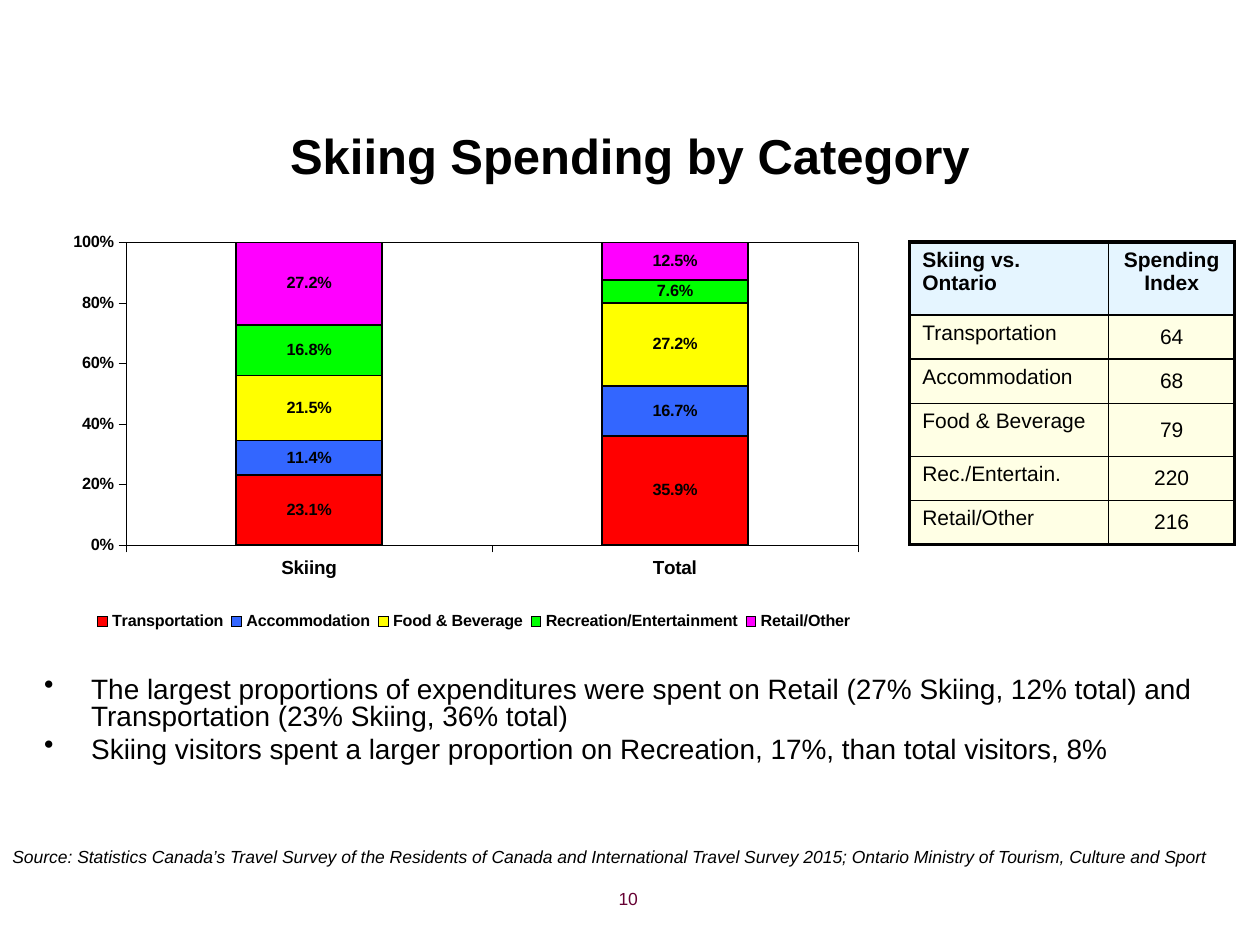
from lxml.etree import SubElement
from pptx import Presentation
from pptx.chart.data import CategoryChartData
from pptx.dml.color import RGBColor
from pptx.enum.chart import XL_CHART_TYPE as ChartType, XL_LEGEND_POSITION as LegendPos
from pptx.enum.chart import XL_TICK_MARK as TickMark
from pptx.enum.text import MSO_ANCHOR as Anchor, PP_ALIGN as Align
from pptx.oxml import parse_xml
from pptx.oxml.ns import nsdecls, qn
from pptx.util import Cm, Pt

FONT = "Arial"
BLACK = "000000"
CATEGORIES = ["Skiing", "Total"]
SPENDING = [
    ("Transportation", "FF0000", (0.231, 0.359)),
    ("Accommodation", "3366FF", (0.114, 0.167)),
    ("Food & Beverage", "FFFF00", (0.215, 0.272)),
    ("Recreation/Entertainment", "00FF00", (0.168, 0.076)),
    ("Retail/Other", "FF00FF", (0.272, 0.125)),
]
INDEX_ROWS = [
    ("Skiing vs. Ontario", "Spending Index"),
    ("Transportation", "64"),
    ("Accommodation", "68"),
    ("Food & Beverage", "79"),
    ("Rec./Entertain.", "220"),
    ("Retail/Other", "216"),
]
FINDINGS = [
    "The largest proportions of expenditures were spent on Retail (27% Skiing, 12% total) "
    "and Transportation (23% Skiing, 36% total)",
    "Skiing visitors spent a larger proportion on Recreation, 17%, than total visitors, 8%",
]
SOURCE = (
    "Source: Statistics Canada’s Travel Survey of the Residents of Canada and International "
    "Travel Survey 2015; Ontario Ministry of Tourism, Culture and Sport"
)


def rgb(hex_color):
    """Turn a hex string into a colour."""
    return RGBColor.from_string(hex_color)


def style_font(font, size, color=BLACK, bold=False, italic=False):
    """Set typeface, size, colour and weight of a font."""
    font.name, font.size = FONT, Pt(size)
    font.bold, font.italic = bold, italic
    font.color.rgb = rgb(color)


def add_text(paragraph, text, size, align=Align.LEFT, **style):
    """Add one styled run to an aligned paragraph."""
    paragraph.alignment = align
    run = paragraph.add_run()
    run.text = text
    style_font(run.font, size, **style)


def add_frame(slide, box):
    """Add a wrapping text box and return its frame."""
    frame = slide.shapes.add_textbox(*map(Cm, box)).text_frame
    frame.word_wrap = True
    return frame


def place_title(slide, box):
    """Move and fill the title placeholder."""
    title = slide.shapes.title
    title.left, title.top, title.width, title.height = map(Cm, box)
    title.text_frame.vertical_anchor = Anchor.MIDDLE
    add_text(title.text_frame.paragraphs[0], "Skiing Spending by Category", 28,
             Align.CENTER, bold=True)


def set_layout(parent, position, fractions, inner=False):
    """Give a chart part a manual layout in fractions of the chart."""
    for old in parent.findall(qn("c:layout")):
        parent.remove(old)
    layout = parse_xml(f"<c:layout {nsdecls('c')}><c:manualLayout/></c:layout>")
    settings = [("layoutTarget", "inner")] if inner else []
    settings += [("xMode", "edge"), ("yMode", "edge"), *zip("xywh", fractions)]
    for tag, value in settings:
        SubElement(layout[0], qn(f"c:{tag}")).set("val", str(value))
    parent.insert(position, layout)


def style_axis(axis, size):
    """Give an axis thin black lines, outer ticks and bold labels."""
    axis.has_major_gridlines = False
    axis.major_tick_mark, axis.minor_tick_mark = TickMark.OUTSIDE, TickMark.NONE
    axis.format.line.color.rgb = rgb(BLACK)
    axis.format.line.width = Pt(0.25)
    style_font(axis.tick_labels.font, size, bold=True)


def add_spending_chart(slide, box):
    """Add the stacked chart of spending shares."""
    data = CategoryChartData(number_format="0.0%")
    data.categories = CATEGORIES
    for name, _, shares in SPENDING:
        data.add_series(name, shares)
    chart = slide.shapes.add_chart(ChartType.COLUMN_STACKED_100, *map(Cm, box), data).chart
    chart.has_title = False
    style_font(chart.font, 10, bold=True)

    style_axis(chart.category_axis, 10.8)
    share_axis = chart.value_axis
    style_axis(share_axis, 9.3)
    share_axis.minimum_scale, share_axis.maximum_scale = 0, 1
    share_axis.major_unit = 0.2
    share_axis.tick_labels.number_format = "0%"
    share_axis.tick_labels.number_format_is_linked = False

    plot = chart.plots[0]
    plot.gap_width, plot.overlap = 150, 100
    plot.vary_by_categories = False
    for series, (_, color, _) in zip(plot.series, SPENDING):
        series.format.fill.solid()
        series.format.fill.fore_color.rgb = rgb(color)
        series.format.line.color.rgb = rgb(BLACK)
        series.format.line.width = Pt(1)
        labels = series.data_labels
        labels.show_value = True
        labels.number_format, labels.number_format_is_linked = "0.0%", False
        style_font(labels.font, 9.3, bold=True)

    chart.has_legend = True
    legend = chart.legend
    legend.position, legend.include_in_layout = LegendPos.BOTTOM, False
    style_font(legend.font, 9.2, bold=True)
    set_layout(legend._element, 1, (0.06, 0.79, 0.93, 0.07))

    plot_area = plot._element.getparent()
    set_layout(plot_area, 0, (0.105, 0.033, 0.884, 0.632), inner=True)
    plot_area.append(parse_xml(
        f'<c:spPr {nsdecls("c", "a")}><a:noFill/><a:ln w="{Pt(0.25)}"><a:solidFill>'
        f'<a:srgbClr val="{BLACK}"/></a:solidFill></a:ln></c:spPr>'))


def style_cell(cell, color, outer_sides):
    """Give a cell a half-transparent fill and borders, thicker on outer sides."""
    cell.fill.solid()
    cell.fill.fore_color.rgb = rgb(color)
    properties = cell._tc.tcPr
    tint = properties.find(".//" + qn("a:srgbClr"))
    SubElement(tint, qn("a:alpha")).set("val", "50000")
    for position, side in enumerate("LRTB"):
        width = Pt(2.25 if side in outer_sides else 1)
        properties.insert(position, parse_xml(
            f'<a:ln{side} {nsdecls("a")} w="{width}"><a:solidFill>'
            f'<a:srgbClr val="{BLACK}"/></a:solidFill></a:ln{side}>'))


def add_index_table(slide, box):
    """Add the table of spending indexes."""
    table = slide.shapes.add_table(len(INDEX_ROWS), 2, *map(Cm, box)).table
    table.first_row = table.horz_banding = False
    for column, width in zip(table.columns, (4.01, 2.54)):
        column.width = Cm(width)
    for row, height in zip(table.rows, (1.47, 0.89, 0.89, 1.07, 0.89, 0.89)):
        row.height = Cm(height)
    last = len(INDEX_ROWS) - 1
    for r, texts in enumerate(INDEX_ROWS):
        for c, text in enumerate(texts):
            cell = table.cell(r, c)
            outer_sides = "LR"[c] + {0: "T", last: "B"}.get(r, "")
            style_cell(cell, "FFFFCC" if r else "CCECFF", outer_sides)
            if r and c:
                cell.vertical_anchor = Anchor.MIDDLE
                cell.margin_left = cell.margin_right = 0
                cell.margin_top = cell.margin_bottom = 0
            add_text(cell.text_frame.paragraphs[0], text, 12,
                     Align.CENTER if c else Align.LEFT, bold=r == 0)


def add_findings(slide, box):
    """Add the bulleted findings."""
    frame = add_frame(slide, box)
    for i, finding in enumerate(FINDINGS):
        paragraph = frame.add_paragraph() if i else frame.paragraphs[0]
        paragraph.line_spacing = 0.8
        paragraph.space_before = Pt(3.5 if i else 0)
        properties = paragraph._p.get_or_add_pPr()
        properties.set("marL", str(Cm(0.95)))
        properties.set("indent", str(-Cm(0.95)))
        SubElement(properties, qn("a:buChar")).set("char", "•")
        add_text(paragraph, finding, 16)


def add_footer(slide, box):
    """Add the source line and the page number below it."""
    left, top, width, height = box
    source = add_frame(slide, (left, top, width, 0.69))
    add_text(source.paragraphs[0], SOURCE, 10, italic=True)
    number = add_frame(slide, (left + 7.19, top + height - 0.89, 5.92, 0.89))
    add_text(number.paragraphs[0], "10", 10, Align.RIGHT, color="660033")


def main():
    """Build and save the slide."""
    deck = Presentation()
    deck.slide_width, deck.slide_height = Cm(25.4), Cm(19.05)
    slide = deck.slides.add_slide(deck.slide_layouts[5])
    place_title(slide, (1.27, 2.18, 22.86, 1.9))
    add_findings(slide, (0.64, 13.54, 24.13, 3.61))
    add_index_table(slide, (18.34, 4.88, 6.55, 6.1))
    add_spending_chart(slide, (0.79, 4.57, 16.69, 9.65))
    add_footer(slide, (0, 16.94, 24.89, 1.73))
    deck.save("out.pptx")


if __name__ == "__main__":
    main()
